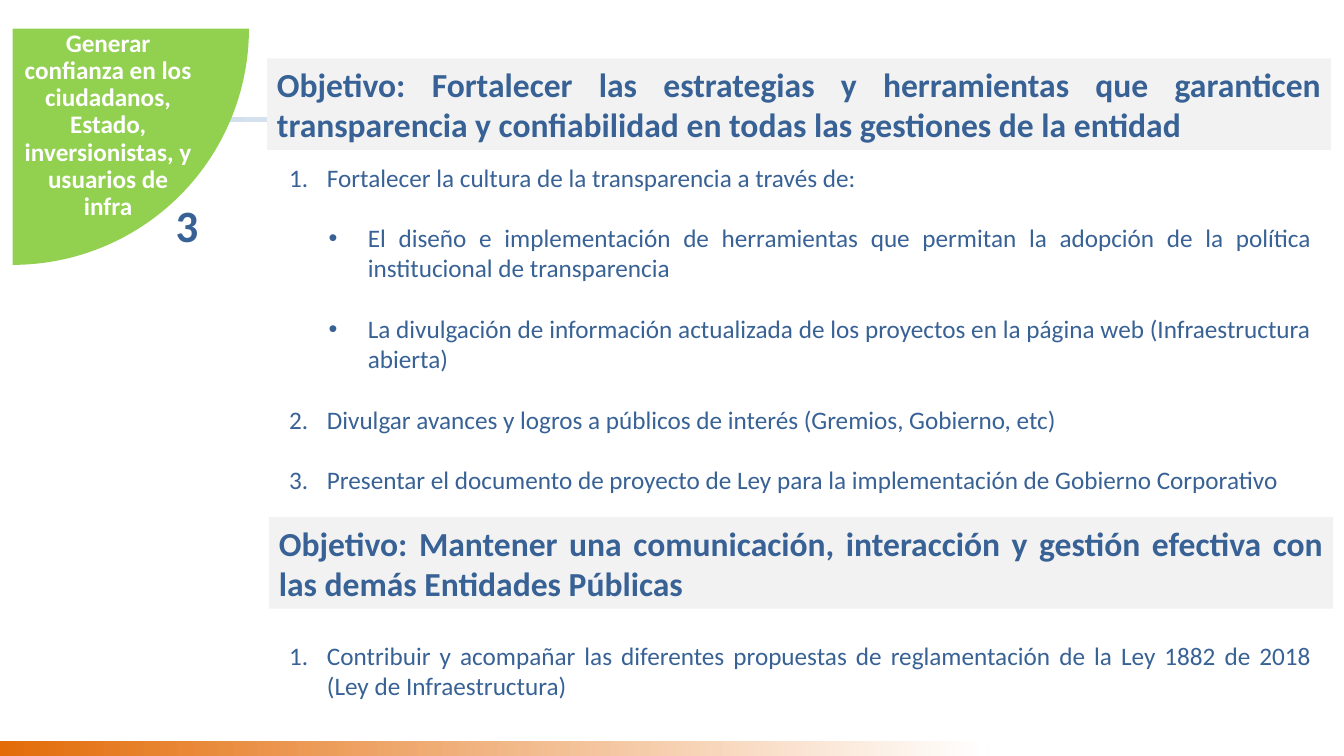
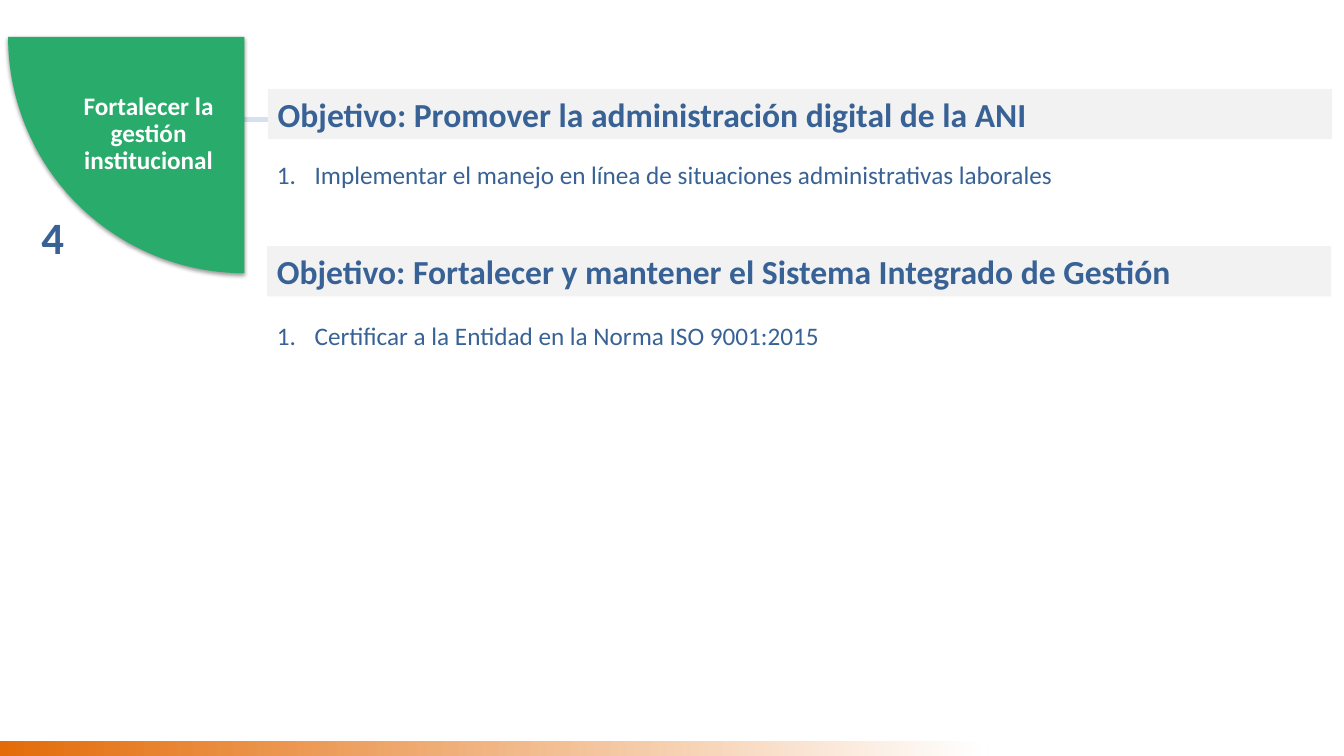
"""Build two slides of strategic goals, each with its objectives and actions."""
import lxml.etree
import pptx
import pptx.dml.color
import pptx.enum.shapes
import pptx.enum.text
import pptx.oxml.ns
import pptx.util

Cm = pptx.util.Cm
Pt = pptx.util.Pt
SHAPES = pptx.enum.shapes.MSO_SHAPE
ALIGN = pptx.enum.text.PP_ALIGN
ANCHOR = pptx.enum.text.MSO_ANCHOR

THEME = {
    "font": "Calibri",
    "ink": "386295",
    "white": "FFFFFF",
    "panel": "F2F2F2",
    "rule": "CCDBEC",
    "footer": "E36C09",
    "body": 18,
    "heading": 24,
    "number": 32,
    "gap": 21.6,
}
PIE_SIZE = 11.91
LABEL_SIZE = (4.39, 5.08)
NUMBER_SIZE = (1.5, 1.63)
HEADING_WIDTH = 26.82
LIST_WIDTH = 26.26
LINE_HEIGHTS = {1: 1.27, 2: 2.31}
INDENTS = {"number": (0.95, -0.95), "bullet": (1.98, -0.99)}

GOALS = [
    {
        "number": "3",
        "label": "Generar confianza en los ciudadanos, Estado, inversionistas, y usuarios de infra",
        "color": "92D050",
        "center": (0.32, 0.72),
        "angles": (0, 54),
        "shadow": False,
        "label_left": 0.53,
        "number_at": (3.96, 4.85),
        "list_left": 7.04,
        "objectives": [
            {
                "title": "Objetivo: Fortalecer las estrategias y herramientas que garanticen "
                         "transparencia y confiabilidad en todas las gestiones de la entidad",
                "at": (6.73, 1.47),
                "lines": 2,
                "list_top": 3.96,
                "list_height": 9.1,
                "actions": [
                    (1, "Fortalecer la cultura de la transparencia a través de:"),
                    ("•", "El diseño e implementación de herramientas que permitan la adopción "
                          "de la política institucional de transparencia"),
                    ("•", "La divulgación de información actualizada de los proyectos en la "
                          "página web (Infraestructura abierta)"),
                    (2, "Divulgar avances y logros a públicos de interés (Gremios, Gobierno, etc)"),
                    (2, "Presentar el documento de proyecto de Ley para la implementación de "
                        "Gobierno Corporativo"),
                ],
            },
            {
                "title": "Objetivo: Mantener una comunicación, interacción y gestión efectiva "
                         "con las demás Entidades Públicas",
                "at": (6.78, 13.03),
                "lines": 2,
                "list_top": 16,
                "list_height": 1.8,
                "actions": [
                    (1, "Contribuir y acompañar las diferentes propuestas de reglamentación de "
                        "la Ley 1882 de 2018 (Ley de Infraestructura)"),
                ],
            },
        ],
    },
    {
        "number": "4",
        "label": "Fortalecer la gestión institucional",
        "color": "29AB6C",
        "center": (6.16, 0.93),
        "angles": (54, 108),
        "shadow": True,
        "label_left": 1.55,
        "number_at": (0.58, 5.16),
        "list_left": 6.73,
        "objectives": [
            {
                "title": "Objetivo: Promover la administración digital de la ANI",
                "at": (6.75, 2.24),
                "lines": 1,
                "list_top": 3.89,
                "list_height": 1.03,
                "actions": [
                    (1, "Implementar el manejo en línea de situaciones administrativas laborales"),
                ],
            },
            {
                "title": "Objetivo: Fortalecer y mantener el Sistema Integrado de Gestión",
                "at": (6.73, 6.2),
                "lines": 1,
                "list_top": 7.95,
                "list_height": 1.03,
                "actions": [
                    (1, "Certificar a la Entidad en la Norma ISO 9001:2015"),
                ],
            },
        ],
    },
]


def rgb(name):
    return pptx.dml.color.RGBColor.from_string(THEME.get(name, name))


def add_element(parent, tag, **attributes):
    element = lxml.etree.SubElement(parent, pptx.oxml.ns.qn(tag))
    for key, value in attributes.items():
        element.set(key, str(value))
    return element


def add_shape(page, kind, left, top, width, height, color=None):
    shape = page.shapes.add_shape(kind, Cm(left), Cm(top), Cm(width), Cm(height))
    shape.shadow.inherit = False
    shape.line.fill.background()
    if color:
        shape.fill.solid()
        shape.fill.fore_color.rgb = rgb(color)
    return shape


def add_fading_band(page, left, top, width, height, color):
    band = add_shape(page, SHAPES.RECTANGLE, left, top, width, height)
    band.fill.gradient()
    band.fill.gradient_angle = 0
    for stop, name in zip(band.fill.gradient_stops, (color, "white")):
        stop.color.rgb = rgb(name)


def add_text_box(page, left, top, width, height):
    box = page.shapes.add_textbox(Cm(left), Cm(top), Cm(width), Cm(height))
    box.text_frame.word_wrap = True
    return box


def format_text(frame, size, color, align, bold):
    for para in frame.paragraphs:
        para.alignment = align
        for span in para.runs:
            span.font.name = THEME["font"]
            span.font.size = Pt(THEME[size])
            span.font.bold = bold
            span.font.color.rgb = rgb(color)


def set_marker(para, marker):
    properties = para._p.get_or_add_pPr()
    kind = "bullet" if marker == "•" else "number"
    margin, indent = INDENTS[kind]
    properties.set("marL", str(Cm(margin)))
    properties.set("indent", str(Cm(indent)))
    if kind == "bullet":
        add_element(properties, "a:buFont", typeface="Arial")
        add_element(properties, "a:buChar", char=marker)
    else:
        add_element(properties, "a:buFont", typeface="+mj-lt")
        add_element(properties, "a:buAutoNum", type="arabicPeriod", startAt=marker)


def add_soft_shadow(shape):
    effects = shape._element.spPr.find(pptx.oxml.ns.qn("a:effectLst"))
    shadow = add_element(effects, "a:outerShdw", blurRad=Pt(3.1), dist=Pt(1.6),
                         dir=5400000, rotWithShape=0)
    black = add_element(shadow, "a:srgbClr", val="000000")
    add_element(black, "a:alpha", val=38000)


def add_goal(page, goal):
    x, y = goal["center"]
    pie = add_shape(page, SHAPES.PIE, x - PIE_SIZE / 2, y - PIE_SIZE / 2,
                    PIE_SIZE, PIE_SIZE, goal["color"])
    for index, angle in enumerate(goal["angles"]):
        pie.adjustments[index] = angle
    if goal["shadow"]:
        add_soft_shadow(pie)

    label = add_text_box(page, goal["label_left"], y - 0.09, *LABEL_SIZE).text_frame
    label.margin_left = label.margin_right = label.margin_top = label.margin_bottom = Cm(0.08)
    label.vertical_anchor = ANCHOR.MIDDLE
    label.text = goal["label"]
    label.paragraphs[0].line_spacing = 0.9
    format_text(label, "body", "white", ALIGN.CENTER, True)

    number = add_text_box(page, *goal["number_at"], *NUMBER_SIZE).text_frame
    number.text = goal["number"]
    format_text(number, "number", "ink", ALIGN.CENTER, True)


def add_objective(page, objective, list_left):
    heading = add_shape(page, SHAPES.RECTANGLE, *objective["at"], HEADING_WIDTH,
                        LINE_HEIGHTS[objective["lines"]], "panel").text_frame
    heading.word_wrap = True
    heading.text = objective["title"]
    format_text(heading, "heading", "ink", ALIGN.JUSTIFY, True)

    actions = add_text_box(page, list_left, objective["list_top"], LIST_WIDTH,
                           objective["list_height"]).text_frame
    actions.text = "\n".join(text for _, text in objective["actions"])
    for index, (marker, _) in enumerate(objective["actions"]):
        para = actions.paragraphs[index]
        set_marker(para, marker)
        if index:
            para.space_before = Pt(THEME["gap"])
    format_text(actions, "body", "ink", ALIGN.JUSTIFY, False)


def main():
    deck = pptx.Presentation()
    deck.slide_width, deck.slide_height = Cm(33.87), Cm(19.05)
    for goal in GOALS:
        page = deck.slides.add_slide(deck.slide_layouts[6])
        add_fading_band(page, 1.07, 2.95, 31.83, 0.13, "rule")
        add_fading_band(page, 0, 18.67, 24.89, 0.38, "footer")
        add_goal(page, goal)
        for objective in goal["objectives"]:
            add_objective(page, objective, goal["list_left"])
    deck.save("out.pptx")


if __name__ == "__main__":
    main()
